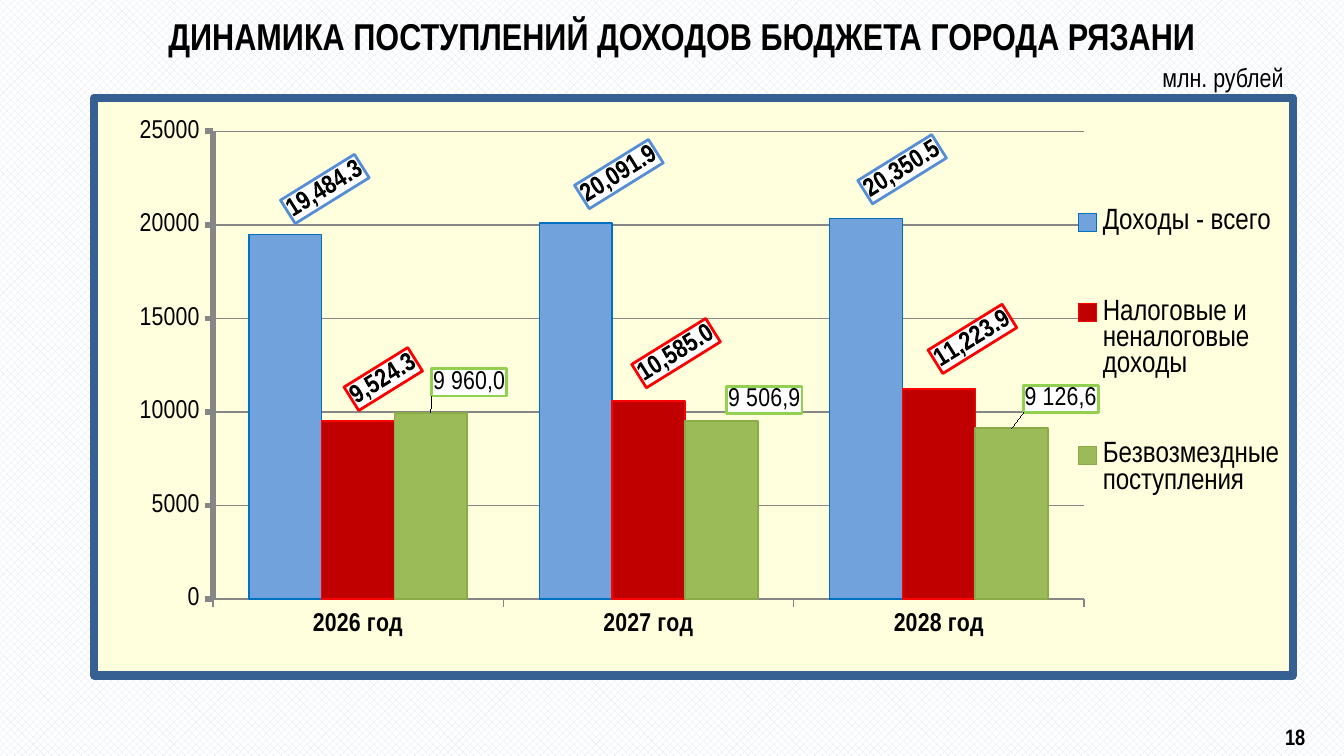
import dataclasses

import lxml.etree
import pptx
import pptx.chart.data
import pptx.dml.color
import pptx.enum.chart
import pptx.enum.dml
import pptx.enum.text
import pptx.oxml
import pptx.oxml.ns
import pptx.util

WIDTH = 10
HEIGHT = WIDTH * 9 / 16
NS = ('xmlns:c="http://schemas.openxmlformats.org/drawingml/2006/chart" '
      'xmlns:a="http://schemas.openxmlformats.org/drawingml/2006/main"')
NO_LEADERS = (f'<c:extLst {NS}><c:ext uri="{{CE6537A1-D6FC-4f65-9D91-7224C49458BB}}" '
              'xmlns:c15="http://schemas.microsoft.com/office/drawing/2012/chart">'
              '<c15:showLeaderLines val="0"/></c:ext></c:extLst>')
ALIGN = pptx.enum.text.PP_ALIGN
ANCHOR = pptx.enum.text.MSO_ANCHOR


@dataclasses.dataclass(frozen=True)
class Theme:
    font: str = "Arial Narrow"
    chart_font: str = "Calibri"
    text: str = "000000"
    paper: str = "FFFFFF"
    check: str = "DCE6F2"
    panel: str = "FFFFDD"
    frame: str = "376092"
    axis: str = "868686"
    title_size: float = 20
    legend_size: float = 15.9
    body_size: float = 14
    number_size: float = 11.9


@dataclasses.dataclass(frozen=True)
class Income:
    name: str
    values: tuple
    fill: str
    line: str
    line_width: float
    label_line: str
    offsets: tuple  # label shifts in percent of the chart's size
    angle: int = 0
    bold: bool = True
    texts: tuple = (None, None, None)


THEME = Theme()
YEARS = ("2026 год", "2027 год", "2028 год")
INCOMES = (
    Income("Доходы - всего", (19484.3, 20091.9, 20350.5),
           "72A2DC", "0070C0", 0.75, "558ED5",
           ((3.3, -1), (3.6, -1.6), (3, -1.6)), angle=-32),
    Income("Налоговые и неналоговые доходы", (9524.3, 10585, 11223.9),
           "C00000", "FF0000", 0.75, "FF0000",
           ((2.1, -0.9), (2.3, -1.4), (2.8, -1.8)), angle=-32),
    Income("Безвозмездные поступления", (9960, 9506.9, 9126.6),
           "9BBB59", "8AAC46", 1, "92D050",
           ((3.2, -2), (3.6, -0.4), (4.1, -1.8)), bold=False,
           texts=("9 960,0", "9 506,9", "9 126,6")),
)


def rgb(value):
    return pptx.dml.color.RGBColor.from_string(value)


def box(x, y, w, h):
    """Turn percents of the slide's size into lengths."""
    return [pptx.util.Inches(share * side / 100)
            for share, side in zip((x, y, w, h), (WIDTH, HEIGHT) * 2)]


def set_font(font, size, bold=False, name=THEME.font):
    font.name, font.size, font.bold = name, pptx.util.Pt(size), bold
    font.color.rgb = rgb(THEME.text)


def set_line(line, color, width):
    line.color.rgb, line.width = rgb(color), pptx.util.Pt(width)


def add_text(s, text, place, size, bold=False, align=ALIGN.RIGHT, anchor=ANCHOR.MIDDLE):
    tf = s.shapes.add_textbox(*box(*place)).text_frame
    tf.word_wrap, tf.vertical_anchor = True, anchor
    p = tf.paragraphs[0]
    p.alignment = align
    r = p.add_run()
    r.text = text
    set_font(r.font, size, bold)


def set_background(s):
    fill = s.background.fill
    fill.patterned()
    fill.pattern = pptx.enum.dml.MSO_PATTERN.LARGE_CHECKER_BOARD
    fill.fore_color.rgb, fill.back_color.rgb = rgb(THEME.check), rgb(THEME.paper)


def layout_xml(x, y, w=None, h=None, inner=False):
    """Manual chart layout in percent; without a size, x and y are shifts."""
    target = '<c:layoutTarget val="inner"/>' if inner else ""
    modes = '<c:xMode val="edge"/><c:yMode val="edge"/>' if w else ""
    size = f'<c:w val="{w / 100}"/><c:h val="{h / 100}"/>' if w else ""
    return (f'<c:layout {NS}><c:manualLayout>{target}{modes}'
            f'<c:x val="{x / 100}"/><c:y val="{y / 100}"/>{size}</c:manualLayout></c:layout>')


def shape_xml(fill, line, width):
    return (f'<c:spPr {NS}><a:solidFill><a:srgbClr val="{fill}"/></a:solidFill>'
            f'<a:ln w="{pptx.util.Pt(width)}"><a:solidFill><a:srgbClr val="{line}"/></a:solidFill>'
            '<a:round/></a:ln></c:spPr>')


def label_xml(income, i):
    font = (f'sz="{THEME.body_size * 100}" b="{int(income.bold)}"><a:solidFill>'
            f'<a:srgbClr val="{THEME.text}"/></a:solidFill><a:latin typeface="{THEME.font}"/>')
    body = f'<a:bodyPr rot="{income.angle * 60000}" vert="horz"/>'
    para = f'<a:pPr><a:defRPr {font}</a:defRPr></a:pPr>'
    text = income.texts[i]
    rich = (f'<c:tx><c:rich>{body}<a:p>{para}<a:r><a:rPr lang="ru-RU" {font}</a:rPr>'
            f'<a:t>{text}</a:t></a:r></a:p></c:rich></c:tx>') if text else ""
    flags = "".join(f'<c:show{name} val="{int(name == "Val")}"/>' for name in
                    ("LegendKey", "Val", "CatName", "SerName", "Percent", "BubbleSize"))
    return (f'<c:dLbl {NS}><c:idx val="{i}"/>{layout_xml(*income.offsets[i])}{rich}'
            '<c:numFmt formatCode="#,##0.0" sourceLinked="0"/>'
            f'{shape_xml(THEME.paper, income.label_line, 1.5)}'
            f'<c:txPr>{body}<a:p>{para}</a:p></c:txPr>'
            f'<c:dLblPos val="outEnd"/>{flags}</c:dLbl>')


def put_layout(parent, index, *args, **kwargs):
    for old in parent.findall(pptx.oxml.ns.qn("c:layout")):
        parent.remove(old)
    parent.insert(index, pptx.oxml.parse_xml(layout_xml(*args, **kwargs)))


def format_series(series, income):
    series.format.fill.solid()
    series.format.fill.fore_color.rgb = rgb(income.fill)
    series.invert_if_negative = False
    set_line(series.format.line, income.line, income.line_width)
    labels = series.data_labels
    labels.show_value = True
    labels.number_format = "#,##0.00" if any(income.texts) else "#,##0.0"
    labels.number_format_is_linked = False
    set_font(labels.font, THEME.body_size, True)
    for i in range(len(YEARS)):
        labels._element.insert(i, pptx.oxml.parse_xml(label_xml(income, i)))
    labels._element.append(lxml.etree.fromstring(NO_LEADERS))


def format_axes(chart):
    tick = pptx.enum.chart.XL_TICK_MARK
    for axis, bold, width in ((chart.category_axis, True, 0.75), (chart.value_axis, False, 3)):
        set_font(axis.tick_labels.font, THEME.body_size, bold)
        set_line(axis.format.line, THEME.axis, width)
        axis.major_tick_mark, axis.minor_tick_mark = tick.OUTSIDE, tick.NONE
    axis = chart.value_axis
    axis.minimum_scale, axis.maximum_scale, axis.major_unit = 0, 25000, 5000
    axis.tick_labels.number_format, axis.tick_labels.number_format_is_linked = "0", False
    set_line(axis.major_gridlines.format.line, THEME.axis, 0.75)


def format_legend(chart):
    chart.has_legend = True
    legend = chart.legend
    legend.position = pptx.enum.chart.XL_LEGEND_POSITION.RIGHT
    legend.include_in_layout = False
    set_font(legend.font, THEME.legend_size)
    put_layout(legend._element, 1, 81.5, 8.2, 18, 71.6)


def add_income_chart(s, place):
    data = pptx.chart.data.CategoryChartData()
    data.categories = YEARS
    for income in INCOMES:
        data.add_series(income.name, income.values)
    kind = pptx.enum.chart.XL_CHART_TYPE.COLUMN_CLUSTERED
    chart = s.shapes.add_chart(kind, *box(*place), data).chart
    chart.has_title = False
    set_font(chart.font, 17.9, name=THEME.chart_font)
    root = chart._chartSpace
    root.find(pptx.oxml.ns.qn("c:txPr")).addprevious(
        pptx.oxml.parse_xml(shape_xml(THEME.panel, THEME.frame, 4.5)))
    plot = chart.plots[0]
    plot.gap_width, plot.overlap, plot.vary_by_categories = 99, 0, False
    for series, income in zip(plot.series, INCOMES):
        format_series(series, income)
    format_axes(chart)
    format_legend(chart)
    put_layout(root.chart.plotArea, 0, 9.9, 5.8, 72.7, 81, inner=True)


def main():
    prs = pptx.Presentation()
    prs.slide_width, prs.slide_height = pptx.util.Inches(WIDTH), pptx.util.Inches(HEIGHT)
    s = prs.slides.add_slide(prs.slide_layouts[6])
    set_background(s)
    add_text(s, "ДИНАМИКА ПОСТУПЛЕНИЙ ДОХОДОВ БЮДЖЕТА ГОРОДА РЯЗАНИ",
             (3.5, 1.1, 94.5, 7.1), THEME.title_size, bold=True, align=ALIGN.CENTER)
    add_income_chart(s, (6.7, 12.4, 89.8, 77.5))
    add_text(s, "млн. рублей", (83.1, 8, 13.4, 4.3), THEME.body_size)
    add_text(s, "18", (89.8, 94.8, 8.3, 4.6), THEME.number_size, bold=True,
             anchor=ANCHOR.TOP)
    prs.save("out.pptx")


if __name__ == "__main__":
    main()
